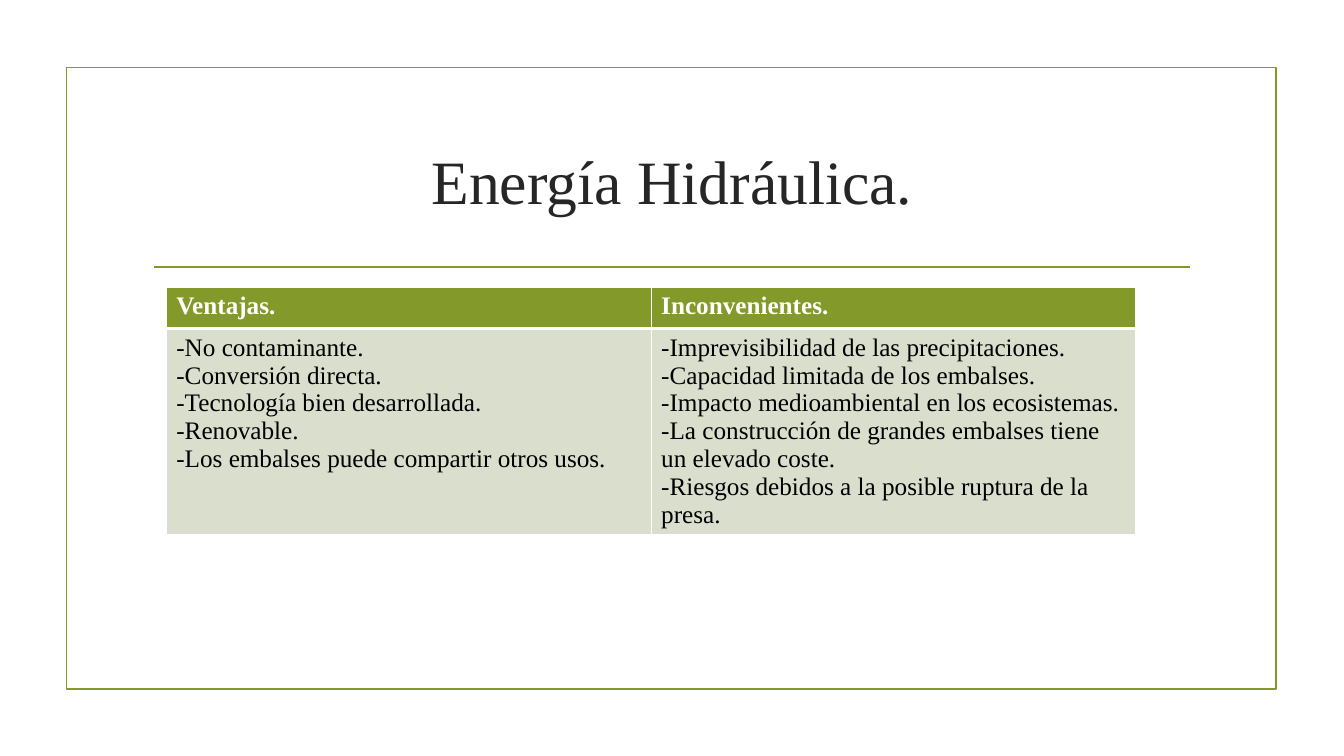
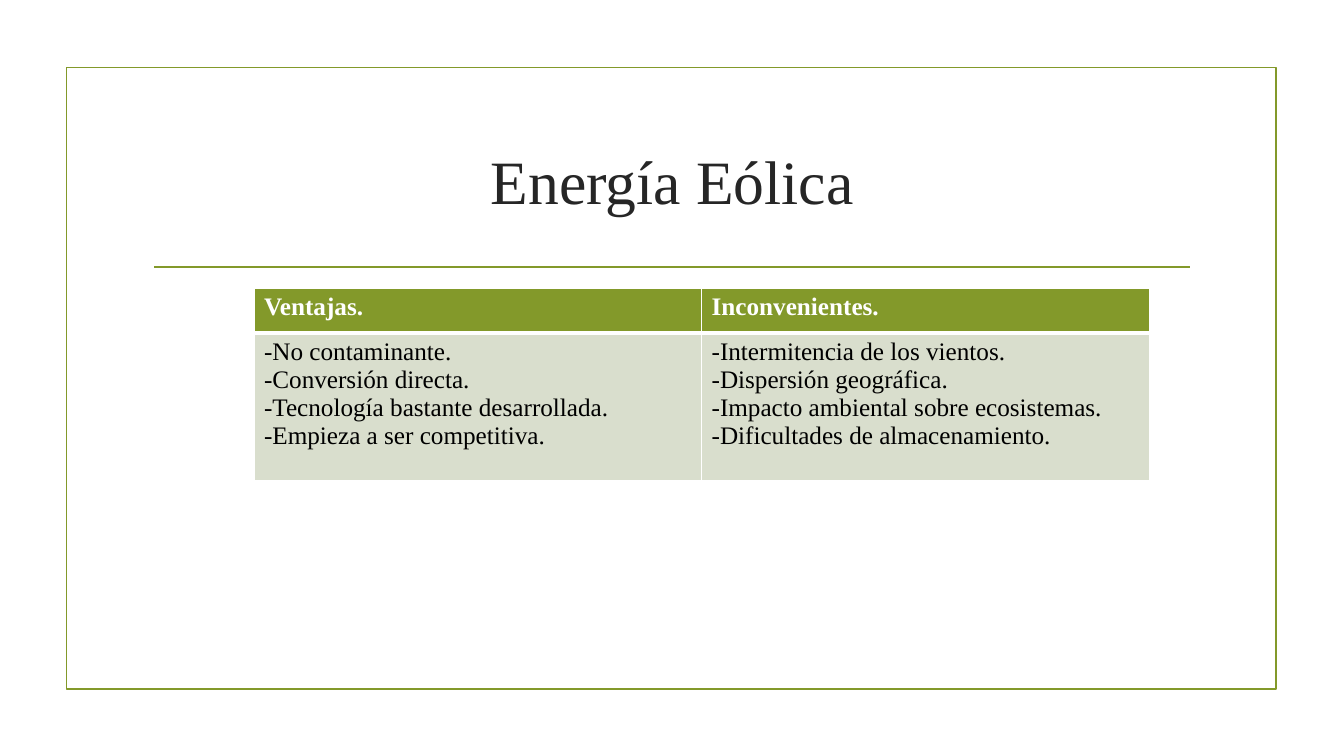
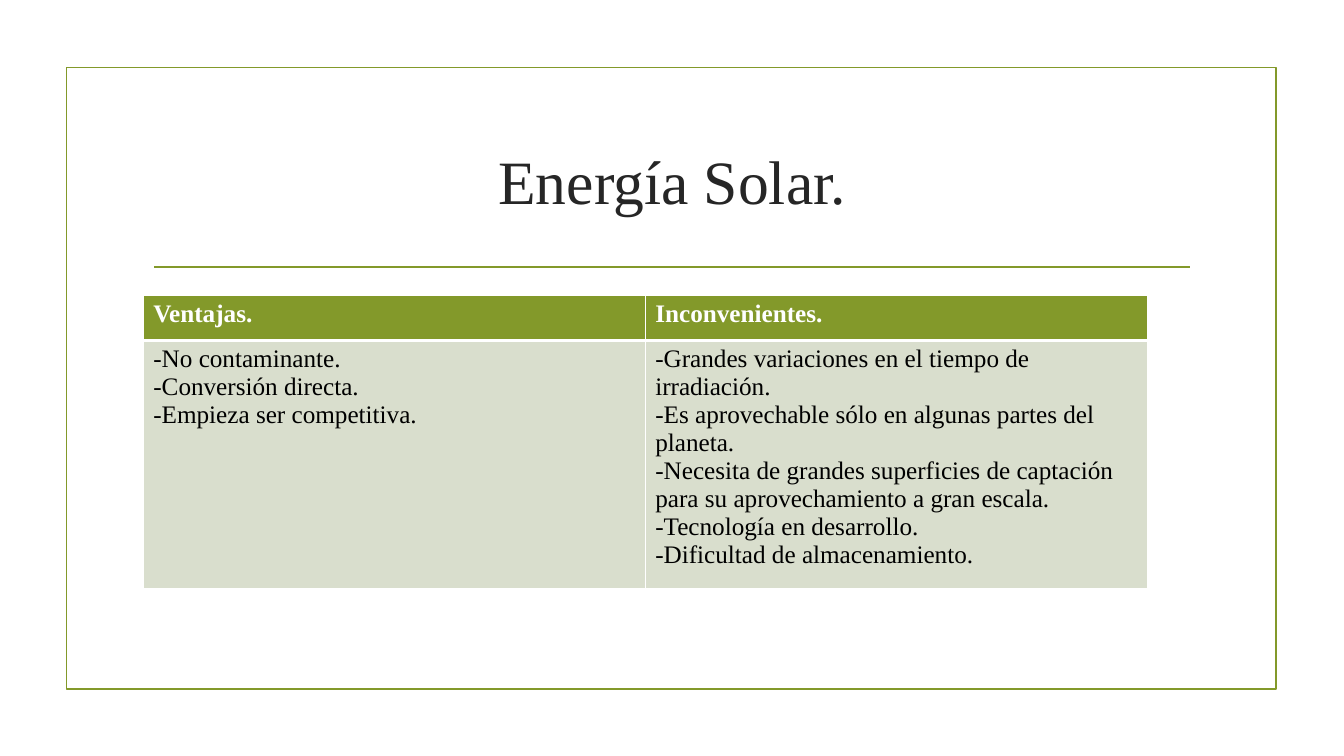
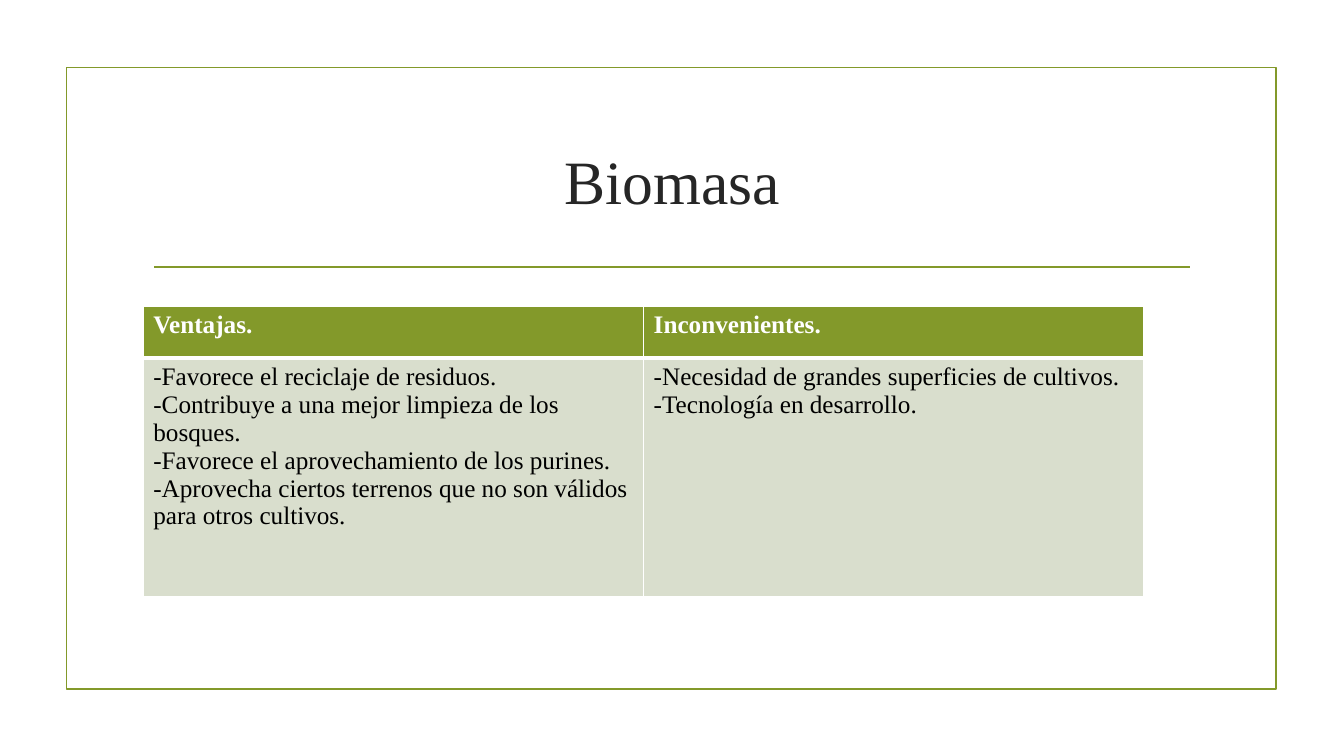
"""Build four slides comparing the advantages and drawbacks of renewable energies."""
from lxml import etree
from pptx import Presentation
from pptx import util as u
from pptx.dml import color
from pptx.enum import shapes, text
from pptx.oxml import ns

COLORS = {"green": "83992A", "pale": "D9DECD", "title": "262626", "white": "FFFFFF", "black": "000000"}
FONT = "Times New Roman"
TITLE = {"name": FONT, "size": u.Pt(44), "bold": False}
HEADER = {"name": FONT, "size": u.Pt(18), "bold": True}
BODY = {"name": FONT, "size": u.Pt(18), "bold": False}
TITLE_BOX = {"left": u.Cm(3.61), "top": u.Cm(2.72), "width": u.Cm(26.67), "height": u.Cm(3.63)}
HEADINGS = ["Ventajas.", "Inconvenientes."]

TOPICS = [
    {
        "title": "Energía Hidráulica.",
        "left": 4.19, "top": 7.24, "column": 12.22, "rows": [1.04, 5.18],
        "lists": [
            ["-No contaminante.", "-Conversión directa.", "-Tecnología bien desarrollada.",
             "-Renovable.", "-Los embalses puede compartir otros usos."],
            ["-Imprevisibilidad de las precipitaciones.", "-Capacidad limitada de los embalses.",
             "-Impacto medioambiental en los ecosistemas.",
             "-La construcción de grandes embalses tiene un elevado coste.",
             "-Riesgos debidos a la posible ruptura de la presa."],
        ],
    },
    {
        "title": "Energía Eólica",
        "left": 6.4, "top": 7.26, "column": 11.28, "rows": [1.14, 3.7],
        "lists": [
            ["-No contaminante.", "-Conversión directa.", "-Tecnología bastante desarrollada.",
             "-Empieza a ser competitiva."],
            ["-Intermitencia de los vientos.", "-Dispersión geográfica.",
             "-Impacto ambiental sobre ecosistemas.", "-Dificultades de almacenamiento."],
        ],
    },
    {
        "title": "Energía Solar.",
        "left": 3.61, "top": 7.44, "column": 12.65, "rows": [1.14, 6.25],
        "lists": [
            ["-No contaminante.", "-Conversión directa.", "-Empieza ser competitiva."],
            ["-Grandes variaciones en el tiempo de irradiación.",
             "-Es aprovechable sólo en algunas partes del planeta.",
             "-Necesita de grandes superficies de captación para su aprovechamiento a gran escala.",
             "-Tecnología en desarrollo.", "-Dificultad de almacenamiento."],
        ],
    },
    {
        "title": "Biomasa",
        "left": 3.61, "top": 7.72, "column": 12.61, "rows": [1.3, 6.02],
        "lists": [
            ["-Favorece el reciclaje de residuos.", "-Contribuye a una mejor limpieza de los bosques.",
             "-Favorece el aprovechamiento de los purines.",
             "-Aprovecha ciertos terrenos que no son válidos para otros cultivos."],
            ["-Necesidad de grandes superficies de cultivos.", "-Tecnología en desarrollo."],
        ],
    },
]


def write(frame, lines, style, tint, align):
    frame.text = "\n".join(lines)
    for para in frame.paragraphs:
        para.alignment = align
        for span in para.runs:
            for name, value in style.items():
                setattr(span.font, name, value)
            span.font.color.rgb = color.RGBColor.from_string(COLORS[tint])


def add_borders(cell, widths):
    properties = cell._tc.get_or_add_tcPr()
    for side, points in widths.items():
        border = etree.SubElement(properties, ns.qn(f"a:ln{side}"), w=str(u.Pt(points)))
        fill = etree.SubElement(border, ns.qn("a:solidFill"))
        etree.SubElement(fill, ns.qn("a:srgbClr"), val=COLORS["white"])


deck = Presentation()
deck.slide_width, deck.slide_height = u.Cm(33.87), u.Cm(19.05)
layout = deck.slide_layouts[5]
for holder in list(layout.placeholders):
    if holder.placeholder_format.type == shapes.PP_PLACEHOLDER.TITLE:
        for name, value in TITLE_BOX.items():
            setattr(holder, name, value)
    else:
        layout.shapes.element.remove(holder.element)

pages = [deck.slides.add_slide(layout) for topic in TOPICS]

border_box = pages[0].shapes.add_shape(
    shapes.MSO_SHAPE.RECTANGLE, u.Cm(1.68), u.Cm(1.7), u.Cm(30.48), u.Cm(15.67))
border_box.shadow.inherit = False
border_box.fill.background()
title_rule = pages[0].shapes.add_connector(
    shapes.MSO_CONNECTOR.STRAIGHT, u.Cm(3.89), u.Cm(6.73), u.Cm(30), u.Cm(6.73))
etree.SubElement(title_rule.element.spPr, ns.qn("a:effectLst"))
for position, item in enumerate([border_box, title_rule], start=2):
    item.line.color.rgb = color.RGBColor.from_string(COLORS["green"])
    item.line.width = u.Pt(1.25)
    layout.shapes.element.insert(position, item.element)
effects = title_rule.element.spPr.find(ns.qn("a:effectLst"))
title_rule.element.spPr.append(effects)

for page, topic in zip(pages, TOPICS):
    write(page.shapes.title.text_frame, [topic["title"]], TITLE, "title", text.PP_ALIGN.CENTER)
    table = page.shapes.add_table(
        2, 2, u.Cm(topic["left"]), u.Cm(topic["top"]),
        u.Cm(2 * topic["column"]), u.Cm(sum(topic["rows"]))).table
    for row, height in zip(table.rows, topic["rows"]):
        row.height = u.Cm(height)
    for index, (heading, lines) in enumerate(zip(HEADINGS, topic["lists"])):
        table.columns[index].width = u.Cm(topic["column"])
        header, body = table.cell(0, index), table.cell(1, index)
        write(header.text_frame, [heading], HEADER, "white", text.PP_ALIGN.LEFT)
        write(body.text_frame, lines, BODY, "black", text.PP_ALIGN.LEFT)
        add_borders(header, {"L": 1, "R": 1, "T": 1, "B": 3})
        add_borders(body, {"L": 1, "R": 1, "T": 3, "B": 1})
        for cell, tint in [(header, "green"), (body, "pale")]:
            cell.fill.solid()
            cell.fill.fore_color.rgb = color.RGBColor.from_string(COLORS[tint])

deck.save("out.pptx")
